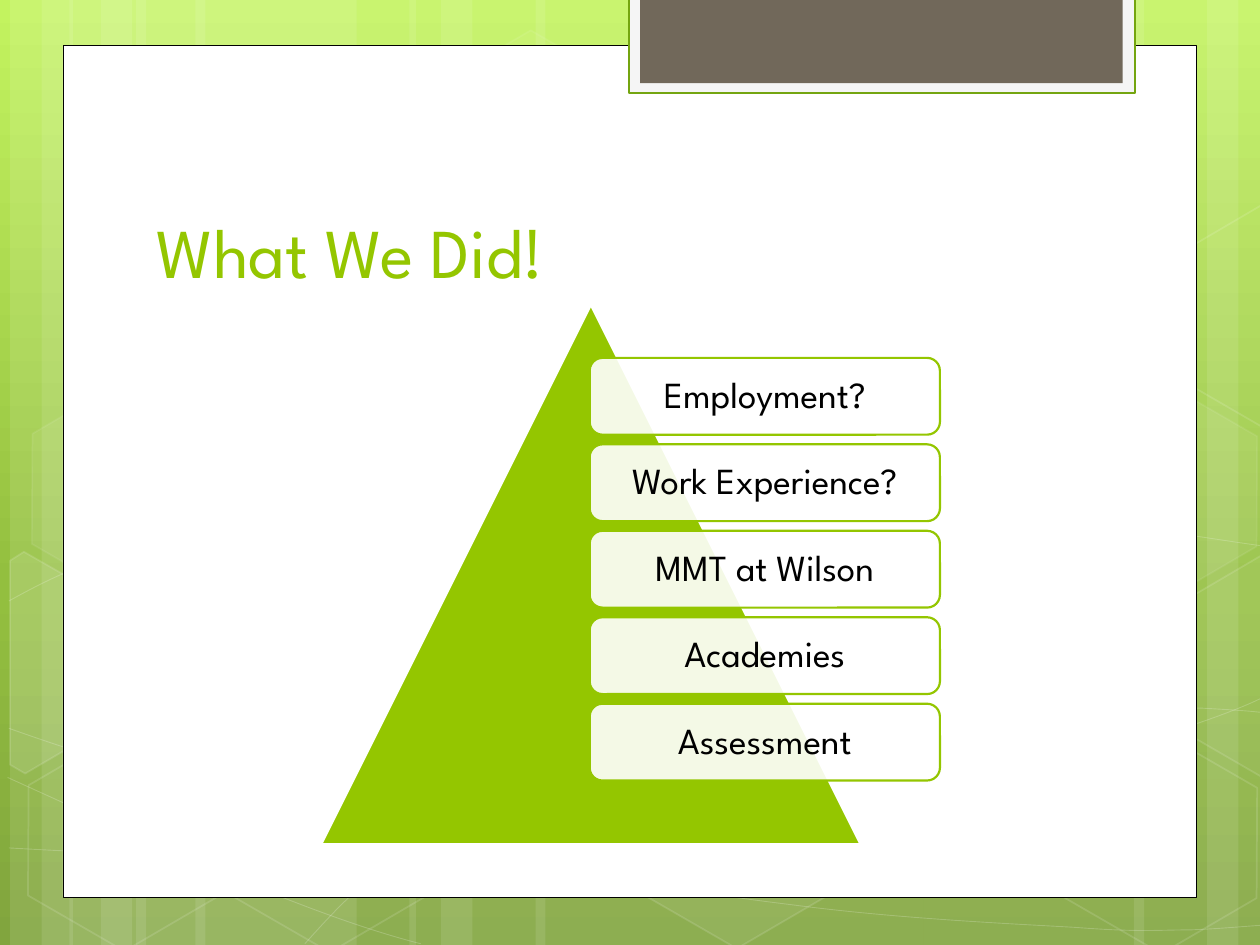
from copy import deepcopy
from typing import NamedTuple, Optional

from lxml.etree import SubElement
from pptx import Presentation
from pptx.dml.color import RGBColor
from pptx.enum.shapes import MSO_SHAPE
from pptx.enum.text import MSO_ANCHOR, MSO_AUTO_SIZE, PP_ALIGN
from pptx.oxml.ns import qn
from pptx.util import Inches, Pt

COLORS = {
    "top": "C3F35F", "middle": "93BF3F", "bottom": "81A53E",
    "white": "FFFFFF", "black": "000000", "frame": "F5F5F5",
    "frame_line": "74A510", "tab": "71685A", "green": "94C600",
}
FONT = "League Spartan"


class Paint(NamedTuple):
    color: str
    alpha: int = 100
    width: float = 0


class Hexagon(NamedTuple):
    left: float
    top: float
    fill: int
    line: int


class Outline(NamedTuple):
    points: list
    fill: int


class Curve(NamedTuple):
    start: tuple
    segments: list


STRIPES = [(1.08, 1.75), (0.08, 0.5), (0.33, 0.83), (1.55, 1.75), (0.55, 0.5), (0.8, 0.83),
           (7.33, 1.75), (9.58, 0.5), (9, 0.83), (4.25, 3.08), (3.25, 0.5), (3.5, 0.83)]

CURVES = [
    Curve((0.07, 6.73), [
        [(0.61, 6.76), (1.15, 6.79), (1.9, 6.78)], [(2.65, 6.77), (3.58, 6.75), (4.58, 6.65)],
        [(5.58, 6.55), (7, 6.36), (7.92, 6.17)], [(8.83, 5.98), (9.77, 5.68), (10.07, 5.51)]]),
    Curve((0.07, 4.77), [
        [(0.36, 4.61), (0.65, 4.46), (1.21, 4.31)], [(1.78, 4.16), (2.59, 3.94), (3.47, 3.87)],
        [(4.36, 3.8), (5.44, 3.79), (6.54, 3.87)], [(7.64, 3.95), (9.47, 4.26), (10.07, 4.34)]]),
    Curve((0.06, 6.17), [[(1.27, 6.72), (2.47, 7.27), (3.34, 7.49)]]),
    Curve((0.07, 5.78), [
        [(0.38, 5.89), (0.7, 6), (1.28, 6.16)], [(1.86, 6.31), (2.73, 6.56), (3.57, 6.73)],
        [(4.4, 6.9), (5.45, 7.08), (6.28, 7.18)], [(7.11, 7.29), (8, 7.33), (8.53, 7.36)],
        [(9.05, 7.4), (9.19, 7.38), (9.45, 7.38)], [(9.71, 7.37), (9.89, 7.35), (10.07, 7.34)]]),
    Curve((2.42, 7.49), [
        [(2.6, 7.29), (2.78, 7.09), (3.02, 6.91)], [(3.26, 6.73), (3.6, 6.53), (3.88, 6.39)],
        [(4.16, 6.25), (4.33, 6.19), (4.7, 6.09)], [(5.06, 5.99), (5.73, 5.85), (6.08, 5.78)],
        [(6.44, 5.71), (6.49, 5.71), (6.8, 5.69)], [(7.11, 5.66), (7.6, 5.63), (7.94, 5.62)],
        [(8.29, 5.61), (8.86, 5.62), (8.86, 5.62)], [(9.53, 5.62)],
        [(9.71, 5.63), (9.88, 5.64), (9.97, 5.65)], [(10.06, 5.66), (10.03, 5.65), (10.06, 5.66)]]),
]

HEXAGONS = [
    Hexagon(3.34, 0.36, 4, 8), Hexagon(4.97, 5.89, 6, 12), Hexagon(0.11, 5.91, 0, 12),
    Hexagon(0.14, 3.12, 7, 8), Hexagon(1.74, 5.92, 0, 12), Hexagon(7.53, 4.53, 10, 12),
    Hexagon(8.34, 5.93, 0, 12), Hexagon(8.34, 3.14, 7, 8),
]

CUT_HEXAGONS = [
    Outline([(0.08, 4.45), (0.19, 4.38), (0.96, 4.82), (0.95, 5.7), (0.2, 6.14),
             (0.08, 6.07)], 10),
    Outline([(9.26, 4.85), (10.01, 4.41), (10.09, 4.46), (10.09, 6.13), (10.02, 6.17),
             (9.26, 5.73)], 4),
    Outline([(9.26, 2.07), (10.01, 1.63), (10.1, 1.68), (10.09, 3.35), (10.02, 3.39),
             (9.26, 2.95)], 0),
]

STEPS = ["Employment?", "Work Experience?", "MMT at Wilson", "Academies", "Assessment"]
STEP_HEIGHT = 0.61
STEP_PITCH = STEP_HEIGHT * 9 / 8


def rgb(name: str) -> RGBColor:
    return RGBColor.from_string(COLORS[name])


def apply_paint(fill, paint: Optional[Paint]) -> None:
    if not paint or not paint.alpha:
        fill.background()
        return
    fill.solid()
    fill.fore_color.rgb = rgb(paint.color)


def style(sp, fill: Optional[Paint] = None, line: Optional[Paint] = None):
    sp.shadow.inherit = False
    apply_paint(sp.fill, fill)
    apply_paint(sp.line.fill, line)
    if line:
        sp.line.width = Pt(line.width)
    pr = sp.element.spPr
    for parent, paint in ((pr, fill), (pr.find(qn("a:ln")), line)):
        if paint and 0 < paint.alpha < 100:
            color = parent.find(qn("a:solidFill")).find(qn("a:srgbClr"))
            SubElement(color, qn("a:alpha"), val=str(paint.alpha * 1000))
    return sp


def add_shape(s, kind, box: tuple, fill: Optional[Paint] = None, line: Optional[Paint] = None):
    return style(s.shapes.add_shape(kind, *map(Inches, box)), fill, line)


def add_outline(s, points: list, closed: bool, fill: Optional[Paint], line: Paint):
    emu = [(Inches(x), Inches(y)) for x, y in points]
    builder = s.shapes.build_freeform(*emu[0])
    builder.add_line_segments(emu[1:], close=closed)
    return style(builder.convert_to_shape(), fill, line)


def add_curve(s, curve: Curve) -> None:
    points = [curve.start] + [point for segment in curve.segments for point in segment]
    sp = add_outline(s, points, False, None, Paint("white", 20, 0.5))
    outline = sp.element.find(".//" + qn("a:path"))
    lines = iter(outline.findall(qn("a:lnTo")))
    for segment in curve.segments:
        parts = [next(lines) for _ in segment]
        if len(parts) == 3:
            cubic = SubElement(outline, qn("a:cubicBezTo"))
            for part in parts:
                cubic.append(part[0])
                outline.remove(part)
        else:
            outline.append(parts[0])


def add_background(s) -> None:
    fill = s.background.fill
    fill.gradient()
    fill.gradient_angle = 270
    stops = s.element.find(".//" + qn("a:gsLst"))
    stops.insert(1, deepcopy(stops[0]))
    settings = ((0, "top"), (0.62, "middle"), (1, "bottom"))
    for stop, (position, color) in zip(fill.gradient_stops, settings):
        stop.position = position
        stop.color.rgb = rgb(color)


def add_decoration(s) -> None:
    for left, width in STRIPES:
        add_shape(s, MSO_SHAPE.RECTANGLE, (left, 0, width, 7.5), Paint("white", 10))
    for curve in CURVES:
        add_curve(s, curve)
    for h in HEXAGONS:
        sp = add_shape(s, MSO_SHAPE.HEXAGON, (h.left, h.top, 1.75, 1.52),
                       Paint("white", h.fill), Paint("white", h.line, 1))
        sp.adjustments[0] = 0.285
        sp.rotation = 30
    for outline in CUT_HEXAGONS:
        add_outline(s, outline.points, True, Paint("white", outline.fill),
                    Paint("white", 12, 1))


def add_panel(s) -> None:
    rect = MSO_SHAPE.RECTANGLE
    add_shape(s, rect, (0.5, 0.36, 9, 6.76), Paint("white"), Paint("black", width=0.5))
    add_shape(s, rect, (4.99, -0.02, 4.02, 0.76), Paint("frame"),
              Paint("frame_line", width=1.25))
    add_shape(s, rect, (5.08, -0.02, 3.83, 0.68), Paint("tab"))


def set_text(sp, text: str, size: float, color: str, align, anchor) -> None:
    tf = sp.text_frame
    tf.text = text
    tf.word_wrap = True
    tf.auto_size = MSO_AUTO_SIZE.NONE
    tf.vertical_anchor = anchor
    p = tf.paragraphs[0]
    p.alignment = align
    p.font.name = FONT
    p.font.size = Pt(size)
    p.font.color.rgb = rgb(color)


def add_title(s, text: str) -> None:
    sp = s.shapes.title
    sp.left, sp.top, sp.width, sp.height = map(Inches, (1.14, 1.12, 7.68, 1.25))
    set_text(sp, text, 40, "green", PP_ALIGN.LEFT, MSO_ANCHOR.BOTTOM)
    sp.element.getparent().append(sp.element)


def add_pyramid(s) -> None:
    add_shape(s, MSO_SHAPE.ISOSCELES_TRIANGLE, (2.55, 2.42, 4.28, 4.28), Paint("green"),
              Paint("white", width=1.25))
    for i, step in enumerate(STEPS):
        sp = add_shape(s, MSO_SHAPE.ROUNDED_RECTANGLE,
                       (4.68, 2.84 + i * STEP_PITCH, 2.78, STEP_HEIGHT),
                       Paint("white", 90), Paint("green", width=1.25))
        set_text(sp, step, 21, "black", PP_ALIGN.CENTER, MSO_ANCHOR.MIDDLE)
        sp.text_frame.paragraphs[0].line_spacing = 0.9


def main() -> None:
    prs = Presentation()
    prs.slide_width, prs.slide_height = Inches(10), Inches(7.5)
    s = prs.slides.add_slide(prs.slide_layouts[5])
    add_background(s)
    add_decoration(s)
    add_panel(s)
    add_title(s, "What We Did!")
    add_pyramid(s)
    prs.save("out.pptx")


if __name__ == "__main__":
    main()
